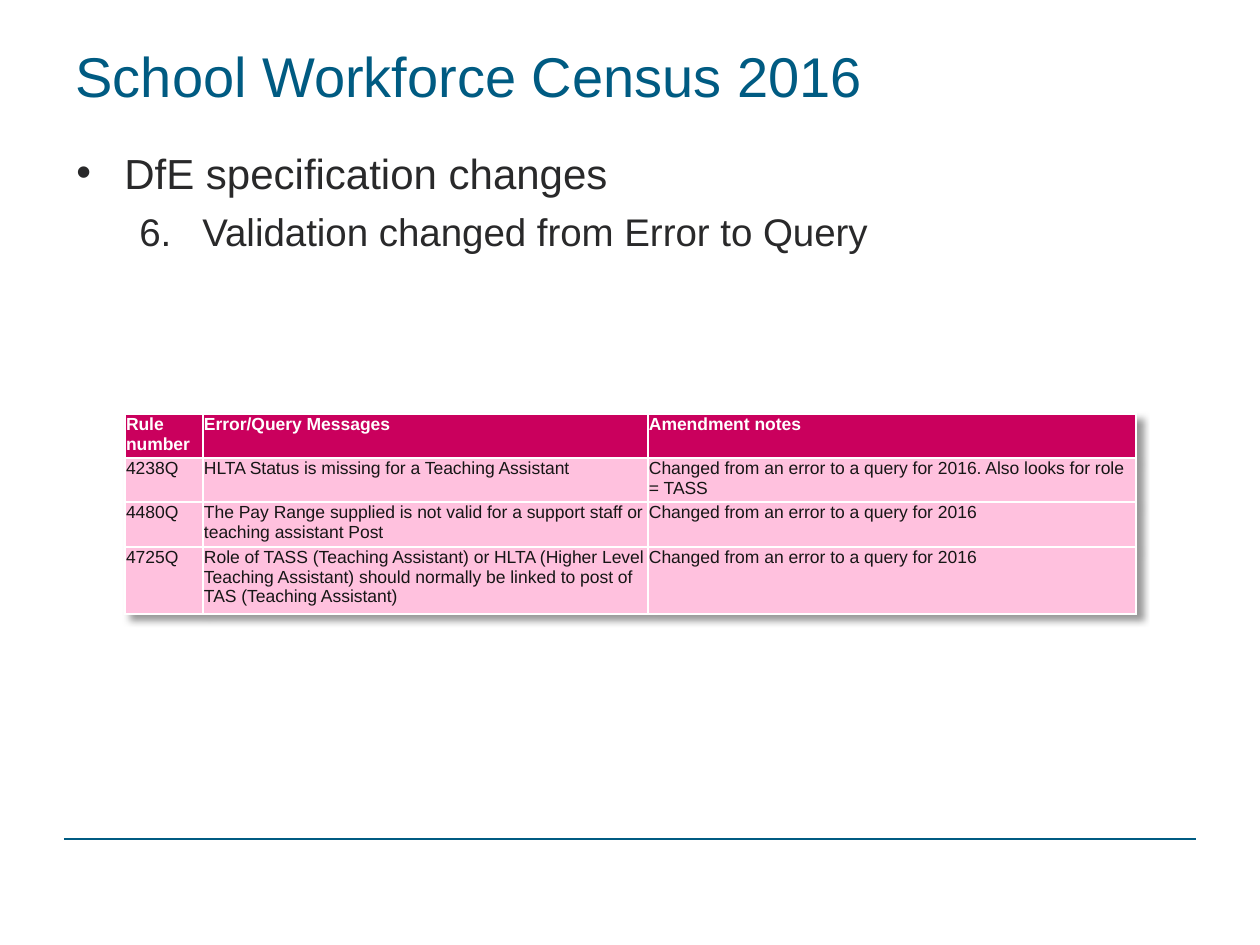
from lxml import etree
from pptx import Presentation, util as u
from pptx.dml.color import RGBColor
from pptx.enum import shapes, text
from pptx.oxml.ns import qn

TITLE = "School Workforce Census 2016"
TOPIC = "DfE specification changes"
CHANGE = "Validation changed from Error to Query"
RULES = [
    ("Rule number", "Error/Query Messages", "Amendment notes"),
    ("4238Q", "HLTA Status is missing for a Teaching Assistant",
     "Changed from an error to a query for 2016. Also looks for role = TASS"),
    ("4480Q", "The Pay Range supplied is not valid for a support staff or teaching assistant Post",
     "Changed from an error to a query for 2016"),
    ("4725Q", "Role of TASS (Teaching Assistant) or HLTA (Higher Level Teaching Assistant) "
     "should normally be linked to post of TAS (Teaching Assistant)",
     "Changed from an error to a query for 2016"),
]
COLUMN_WIDTHS = [78, 445, 488]
ROW_HEIGHTS = [44, 44, 45, 67]

THEME = {
    "font": "Arial",
    "blue": "005B82", "ink": "29292A", "cell_ink": "161616", "white": "FFFFFF",
    "header": "CA005D", "row": "FFC1DE", "shadow": "000000",
    "title_size": 32, "topic_size": 24, "change_size": 22, "cell_size": 10,
}


def px(n):
    return u.Emu(round(n * 914400 / 126))


def colour(name):
    return RGBColor.from_string(THEME[name])


def style(paragraph, size, ink, bold=False):
    font = paragraph.font
    font.name, font.size, font.bold = THEME["font"], u.Pt(THEME[size]), bold
    font.color.rgb = colour(ink)


def add_xml(parent, tag, **attributes):
    return etree.SubElement(parent, qn(tag), {k: str(v) for k, v in attributes.items()})


def mark(paragraph, left, hang, tag, **attributes):
    """Give the paragraph a hanging indent and a bullet or number."""
    properties = paragraph._p.get_or_add_pPr()
    properties.set("marL", str(px(left)))
    properties.set("indent", str(-px(hang)))
    add_xml(properties, "a:buFont", typeface=THEME["font"])
    add_xml(properties, tag, **attributes)


def border(cell):
    properties = cell._tc.get_or_add_tcPr()
    for side in ("a:lnL", "a:lnR", "a:lnT", "a:lnB"):
        line = add_xml(properties, side, w=u.Pt(1))
        add_xml(add_xml(line, "a:solidFill"), "a:srgbClr", val=THEME["white"])


def add_heading(slide):
    title = slide.shapes.title
    title.left, title.top, title.width, title.height = px(63), px(-4), px(1134), px(158)
    title.text_frame.text = TITLE
    title.text_frame.vertical_anchor = text.MSO_ANCHOR.MIDDLE
    heading = title.text_frame.paragraphs[0]
    heading.alignment = text.PP_ALIGN.LEFT
    style(heading, "title_size", "blue")


def add_body(slide):
    frame = slide.shapes.add_textbox(px(64), px(141), px(1132), px(118)).text_frame
    frame.word_wrap = True
    topic = frame.paragraphs[0]
    topic.text = TOPIC
    mark(topic, 48, 48, "a:buChar", char="•")
    style(topic, "topic_size", "ink")
    change = frame.add_paragraph()
    change.text, change.level, change.space_before = CHANGE, 1, u.Pt(6)
    mark(change, 126, 63, "a:buAutoNum", type="arabicPeriod", startAt=6)
    style(change, "change_size", "ink")


def add_rules(slide):
    table = slide.shapes.add_table(
        len(RULES), len(COLUMN_WIDTHS), px(125), px(414),
        px(sum(COLUMN_WIDTHS)), px(sum(ROW_HEIGHTS))).table
    for column, width in zip(table.columns, COLUMN_WIDTHS):
        column.width = px(width)
    for r, (row, height) in enumerate(zip(table.rows, ROW_HEIGHTS)):
        row.height = px(height)
        is_header = r == 0
        for cell, words in zip(row.cells, RULES[r]):
            cell.text = words
            cell.margin_left = cell.margin_right = cell.margin_top = px(1)
            cell.margin_bottom = 0
            border(cell)
            cell.fill.solid()
            cell.fill.fore_color.rgb = colour("header" if is_header else "row")
            style(cell.text_frame.paragraphs[0], "cell_size",
                  "white" if is_header else "cell_ink", is_header)
    effects = etree.Element(qn("a:effectLst"))
    shadow = add_xml(effects, "a:outerShdw", blurRad=u.Pt(4), dist=u.Pt(4),
                     dir=2700000, algn="tl", rotWithShape=0)
    add_xml(add_xml(shadow, "a:srgbClr", val=THEME["shadow"]), "a:alpha", val=40000)
    table._tbl.tblPr.insert(0, effects)


def add_footer_rule(slide):
    rule = slide.shapes.add_connector(
        shapes.MSO_CONNECTOR.STRAIGHT, px(64), px(839), px(1196), px(839))
    rule.line.color.rgb = colour("blue")
    rule.line.width = u.Pt(0.75)
    add_xml(rule._element.spPr, "a:effectLst")


def main():
    deck = Presentation()
    deck.slide_width, deck.slide_height = px(1260), px(945)
    slide = deck.slides.add_slide(deck.slide_layouts[5])
    add_footer_rule(slide)
    add_heading(slide)
    add_body(slide)
    add_rules(slide)
    deck.save("out.pptx")


if __name__ == "__main__":
    main()
